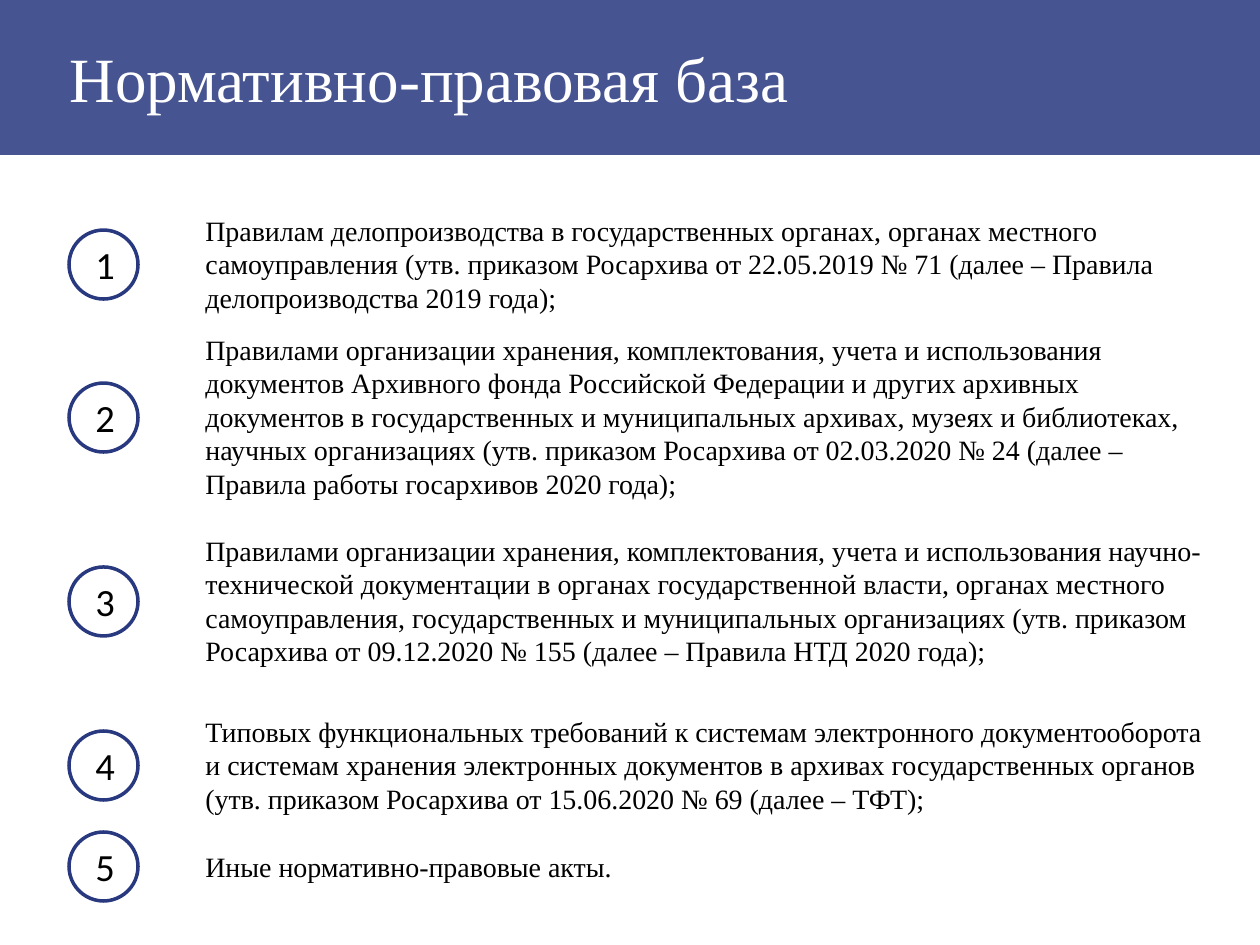
import pptx
import pptx.util
import pptx.dml.color
import pptx.enum.shapes
import pptx.enum.text
import pptx.oxml
import pptx.oxml.ns
from dataclasses import dataclass

SCALE = 914400 / 126  # EMU in one px
ANCHOR = pptx.enum.text.MSO_ANCHOR
ALIGN = pptx.enum.text.PP_ALIGN
FIT = pptx.enum.text.MSO_AUTO_SIZE
SHAPE = pptx.enum.shapes.MSO_SHAPE


@dataclass(frozen=True)
class Theme:
    navy: str = "283980"
    white: str = "FFFFFF"
    black: str = "000000"
    serif: str = "Times New Roman"
    sans: str = "Calibri"
    head: int = 36
    digit: int = 22
    body: int = 16


@dataclass(frozen=True)
class Rule:
    top: int
    lines: int
    text: str

    @property
    def high(self) -> int:
        return 34 * self.lines + 13

    @property
    def mid(self) -> int:
        return self.top + self.high // 2


THEME = Theme()
RING = 69   # circle size
LEFT = 69   # circle left edge
RULES = [
    Rule(207, 3, "Правилам делопроизводства в государственных органах, органах "
         "местного самоуправления (утв. приказом Росархива от 22.05.2019 № 71 "
         "(далее – Правила делопроизводства 2019 года);"),
    Rule(326, 5, "Правилами организации хранения, комплектования, учета и "
         "использования документов Архивного фонда Российской Федерации и других "
         "архивных документов в государственных и муниципальных архивах, музеях и "
         "библиотеках, научных организациях (утв. приказом Росархива от 02.03.2020 "
         "№ 24 (далее – Правила работы госархивов 2020 года);"),
    Rule(527, 4, "Правилами организации хранения, комплектования, учета и "
         "использования научно-технической документации в органах государственной "
         "власти, органах местного самоуправления, государственных и муниципальных "
         "организациях (утв. приказом Росархива от 09.12.2020 № 155 (далее – "
         "Правила НТД 2020 года);"),
    Rule(708, 3, "Типовых функциональных требований к системам электронного "
         "документооборота и системам хранения электронных документов в архивах "
         "государственных органов (утв. приказом Росархива от 15.06.2020 № 69 "
         "(далее – ТФТ);"),
    Rule(843, 1, "Иные нормативно-правовые акты."),
]


def px(*vals: int) -> list[int]:
    return [pptx.util.Emu(round(val * SCALE)) for val in vals]


def rgb(code: str) -> pptx.dml.color.RGBColor:
    return pptx.dml.color.RGBColor.from_string(code)


def write(shape, text: str, face: str, size: int, color: str,
          align=ALIGN.LEFT, wrap: bool = True, fit=FIT.SHAPE_TO_FIT_TEXT) -> None:
    frame = shape.text_frame
    frame.text = text
    frame.word_wrap = wrap
    frame.auto_size = fit
    frame.vertical_anchor = ANCHOR.TOP
    para = frame.paragraphs[0]
    para.alignment = align
    para.font.name = face
    para.font.size = pptx.util.Pt(size)
    para.font.color.rgb = rgb(color)


def add_head(slide, text: str) -> None:
    band = slide.shapes.add_shape(SHAPE.RECTANGLE, *px(0, 0, 1260, 155))
    band.shadow.inherit = False
    band.line.fill.background()
    band.fill.solid()
    band.fill.fore_color.rgb = rgb(THEME.navy)
    tint = band.element.find(".//" + pptx.oxml.ns.qn("a:srgbClr"))
    tint.append(pptx.oxml.parse_xml(
        '<a:alpha xmlns:a="http://schemas.openxmlformats.org/drawingml/2006/main"'
        ' val="86000"/>'))
    title = slide.shapes.title
    title.element.addprevious(band.element)  # band goes behind the title
    title.left, title.top, title.width, title.height = px(57, 33, 857, 89)
    write(title, text, THEME.serif, THEME.head, THEME.white, fit=FIT.NONE)


def add_badge(slide, num: int, mid: int) -> None:
    group = slide.shapes.add_group_shape()
    top = mid - RING // 2
    ring = group.shapes.add_shape(SHAPE.OVAL, *px(LEFT, top, RING, RING))
    ring.shadow.inherit = False
    ring.fill.background()
    ring.line.color.rgb = rgb(THEME.navy)
    ring.line.width = pptx.util.Pt(2)
    digit = group.shapes.add_textbox(*px(LEFT + 14, top + 5, 42, 59))
    write(digit, str(num), THEME.sans, THEME.digit, THEME.black,
          align=ALIGN.CENTER, wrap=False)


def add_texts(slide, rules: list[Rule]) -> None:
    group = slide.shapes.add_group_shape()
    for rule in rules:
        box = group.shapes.add_textbox(*px(193, rule.top, 1034, rule.high))
        write(box, rule.text, THEME.serif, THEME.body, THEME.black)


def main() -> None:
    deck = pptx.Presentation()
    deck.slide_width, deck.slide_height = px(1260, 945)
    slide = deck.slides.add_slide(deck.slide_layouts[5])

    # Header band and title
    add_head(slide, "Нормативно-правовая база")

    # Numbered circles, each centred on its text
    for num, rule in enumerate(RULES, 1):
        add_badge(slide, num, rule.mid)

    # Texts of the rules
    add_texts(slide, RULES)

    deck.save("out.pptx")


if __name__ == "__main__":
    main()
